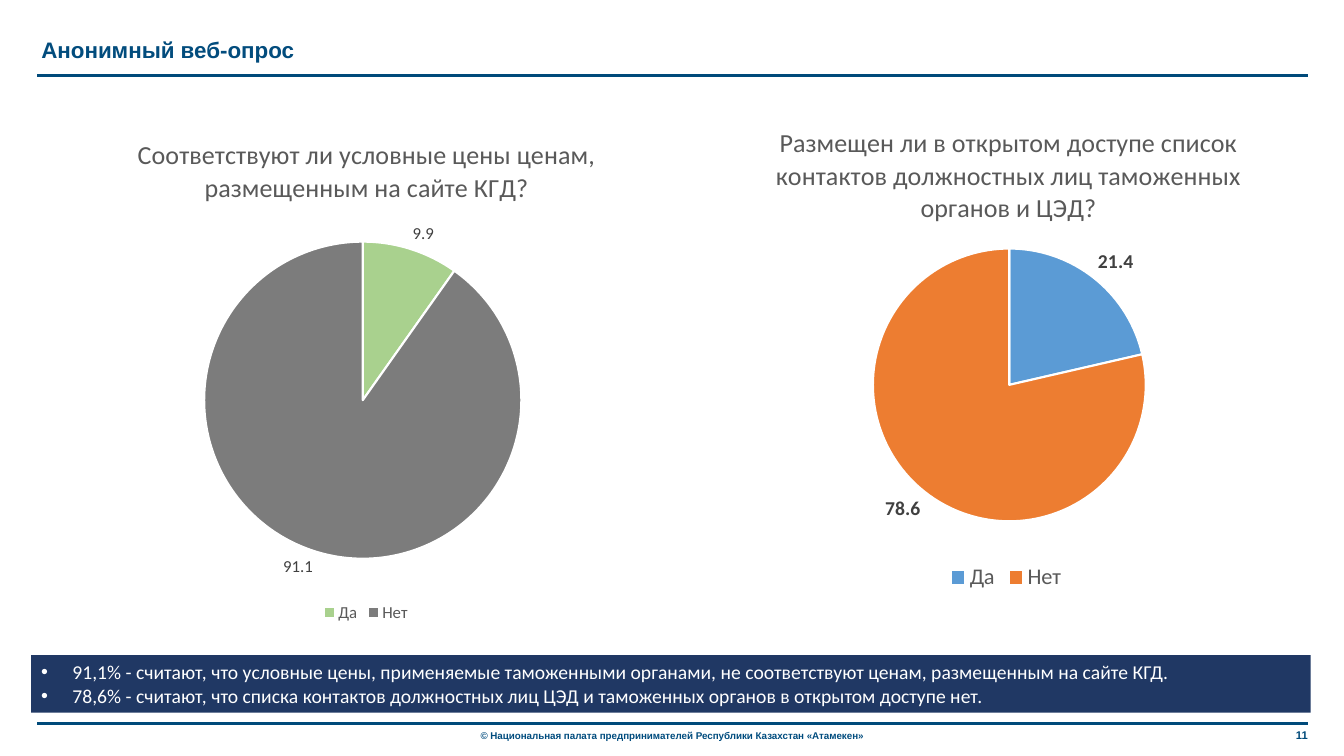
from dataclasses import dataclass

from lxml import etree
from pptx import Presentation
from pptx.chart.data import CategoryChartData
from pptx.dml.color import RGBColor
from pptx.enum.chart import XL_CHART_TYPE, XL_LABEL_POSITION, XL_LEGEND_POSITION
from pptx.enum.shapes import MSO_CONNECTOR, MSO_SHAPE
from pptx.enum.text import MSO_ANCHOR, PP_ALIGN
from pptx.oxml.ns import qn
from pptx.util import Inches, Pt

PIE = XL_CHART_TYPE.PIE
OUTSIDE_END = XL_LABEL_POSITION.OUTSIDE_END
LEGEND_BOTTOM = XL_LEGEND_POSITION.BOTTOM
STRAIGHT = MSO_CONNECTOR.STRAIGHT
RECTANGLE = MSO_SHAPE.RECTANGLE
MIDDLE = MSO_ANCHOR.MIDDLE
LEFT, CENTER, RIGHT = PP_ALIGN.LEFT, PP_ALIGN.CENTER, PP_ALIGN.RIGHT
TITLE_ONLY = 5


@dataclass(frozen=True)
class Theme:
    heading_font: str = "Arial"
    body_font: str = "Calibri"
    rule: str = "004A7A"
    heading: str = "024C7D"
    copyright: str = "004C7E"
    band: str = "203864"
    white: str = "FFFFFF"
    question: str = "595959"
    value: str = "404040"
    heading_size: float = 16
    question_size: float = 18.6
    finding_size: float = 14
    number_size: float = 8
    copyright_size: float = 7


THEME = Theme()
WIDTH, HEIGHT = 13.33, 7.5
MARGIN = 0.31
RULE_LEFT, RULE_RIGHT = 0.37, 12.97
HEADER_Y, FOOTER_Y = HEIGHT * 0.1, 7.18
ANSWERS = ("Да", "Нет")

FINDINGS = (
    "91,1% - считают, что условные цены, применяемые таможенными органами, "
    "не соответствуют ценам, размещенным на сайте КГД.",
    "78,6% - считают, что списка контактов должностных лиц ЦЭД и таможенных "
    "органов в открытом доступе нет.",
)


def rgb(code):
    return RGBColor.from_string(code)


def box(left, top, width, height):
    return [Inches(length) for length in (left, top, width, height)]


def style_font(font, size, color, bold=False, name=THEME.body_font):
    font.name, font.size, font.bold = name, Pt(size), bold
    font.color.rgb = rgb(color)


def add_bullet(paragraph):
    properties = paragraph._p.get_or_add_pPr()
    properties.set("marL", str(Inches(MARGIN)))
    properties.set("indent", str(-Inches(MARGIN)))
    etree.SubElement(properties, qn("a:buFont")).set("typeface", "Arial")
    etree.SubElement(properties, qn("a:buChar")).set("char", "•")


def write(frame, *lines, align=LEFT, bullets=False, **font_format):
    """Fill a text frame with one paragraph per line."""
    frame.word_wrap = True
    frame.vertical_anchor = MIDDLE
    frame.margin_left = frame.margin_right = Inches(0.1)
    frame.margin_top = frame.margin_bottom = Inches(0.05)
    for index, line in enumerate(lines):
        paragraph = frame.paragraphs[0] if index == 0 else frame.add_paragraph()
        paragraph.alignment = align
        if bullets:
            add_bullet(paragraph)
        run = paragraph.add_run()
        run.text = line
        style_font(run.font, **font_format)


def add_rule(slide, y):
    rule = slide.shapes.add_connector(
        STRAIGHT, Inches(RULE_LEFT), Inches(y), Inches(RULE_RIGHT), Inches(y))
    rule.line.color.rgb = rgb(THEME.rule)
    rule.line.width = Pt(2.5)
    etree.SubElement(rule._element.spPr, qn("a:effectLst"))


def set_title(slide, text):
    title = slide.shapes.title
    title.left, title.top, title.width, title.height = box(MARGIN, MARGIN, 8.77, 0.37)
    write(title.text_frame, text, size=THEME.heading_size, color=THEME.heading,
          bold=True, name=THEME.heading_font)


def add_footer_text(slide, text, left, width, **text_format):
    label = slide.shapes.add_textbox(*box(left, FOOTER_Y, width, 0.23))
    write(label.text_frame, text, bold=True, name=THEME.heading_font, **text_format)


def add_findings(slide):
    band = slide.shapes.add_shape(RECTANGLE, *box(MARGIN, 6.5, 12.69, 0.57))
    band.shadow.inherit = False
    band.fill.solid()
    band.fill.fore_color.rgb = rgb(THEME.band)
    band.line.fill.background()
    write(band.text_frame, *FINDINGS, bullets=True,
          size=THEME.finding_size, color=THEME.white)


def place_part(part, position, inner=False, **shares):
    """Fix a chart part at shares of the chart's size."""
    for previous in part.findall(qn("c:layout")):
        part.remove(previous)
    layout = etree.Element(qn("c:layout"))
    part.insert(position, layout)
    manual = etree.SubElement(layout, qn("c:manualLayout"))
    settings = {"layoutTarget": "inner"} if inner else {}
    settings |= {"xMode": "edge", "yMode": "edge"} | shares
    for tag, setting in settings.items():
        etree.SubElement(manual, qn(f"c:{tag}")).set("val", str(setting))


def add_poll(slide, place, question, shares, colors, title_at, pie_at,
             label_size, legend_size, bold):
    data = CategoryChartData(number_format="General")
    data.categories = ANSWERS
    data.add_series("Series 1", shares)
    chart = slide.shapes.add_chart(PIE, *box(*place), data).chart
    style_font(chart.font, 10, "000000")

    chart.has_title = True
    title_run = chart.chart_title.text_frame.paragraphs[0].add_run()
    title_run.text = question
    style_font(title_run.font, THEME.question_size, THEME.question)
    chart.chart_title.include_in_layout = False
    place_part(chart.chart_title._element, 1, **dict(zip("xy", title_at)))
    plot_area = chart._chartSpace.chart.plotArea
    place_part(plot_area, 0, inner=True, **dict(zip("xywh", pie_at)))

    chart.has_legend = True
    chart.legend.position = LEGEND_BOTTOM
    chart.legend.include_in_layout = False
    style_font(chart.legend.font, legend_size, THEME.question)

    pie = chart.plots[0]
    pie.vary_by_categories = True
    for index, color in enumerate(colors):
        slice_format = pie.series[0].points[index].format
        slice_format.fill.solid()
        slice_format.fill.fore_color.rgb = rgb(color)
        slice_format.line.color.rgb = rgb(THEME.white)
        slice_format.line.width = Pt(1.5)
    pie.has_data_labels = True
    labels = pie.data_labels
    labels.show_value, labels.show_percentage = True, False
    labels.position = OUTSIDE_END
    style_font(labels.font, label_size, THEME.value, bold)


def main():
    deck = Presentation()
    deck.slide_width, deck.slide_height = Inches(WIDTH), Inches(HEIGHT)
    slide = deck.slides.add_slide(deck.slide_layouts[TITLE_ONLY])
    for y in (HEADER_Y, FOOTER_Y):
        add_rule(slide, y)
    add_footer_text(slide, "11", 12.36, 0.71, align=RIGHT,
                    size=THEME.number_size, color=THEME.rule)
    add_footer_text(
        slide, "© Национальная палата предпринимателей Республики Казахстан «Атамекен»",
        4.32, 4.69, align=CENTER, size=THEME.copyright_size, color=THEME.copyright)
    set_title(slide, "Анонимный веб-опрос")
    add_findings(slide)
    add_poll(slide, (0.42, 1.05, 6.42, 5.17),
             "Соответствуют ли условные цены ценам, размещенным на сайте КГД?",
             (9.9, 91.1), ("A9D18E", "7C7C7C"),
             title_at=(0.14, 0.05), pie_at=(0.25, 0.26, 0.49, 0.61),
             label_size=12, legend_size=12, bold=False)
    add_poll(slide, (6.83, 0.99, 6.3, 4.92),
             "Размещен ли в открытом доступе список контактов должностных лиц "
             "таможенных органов и ЦЭД?",
             (21.4, 78.6), ("5B9BD5", "ED7D31"),
             title_at=(0.13, 0.04), pie_at=(0.29, 0.3, 0.43, 0.55),
             label_size=14, legend_size=16, bold=True)
    deck.save("out.pptx")


if __name__ == "__main__":
    main()
